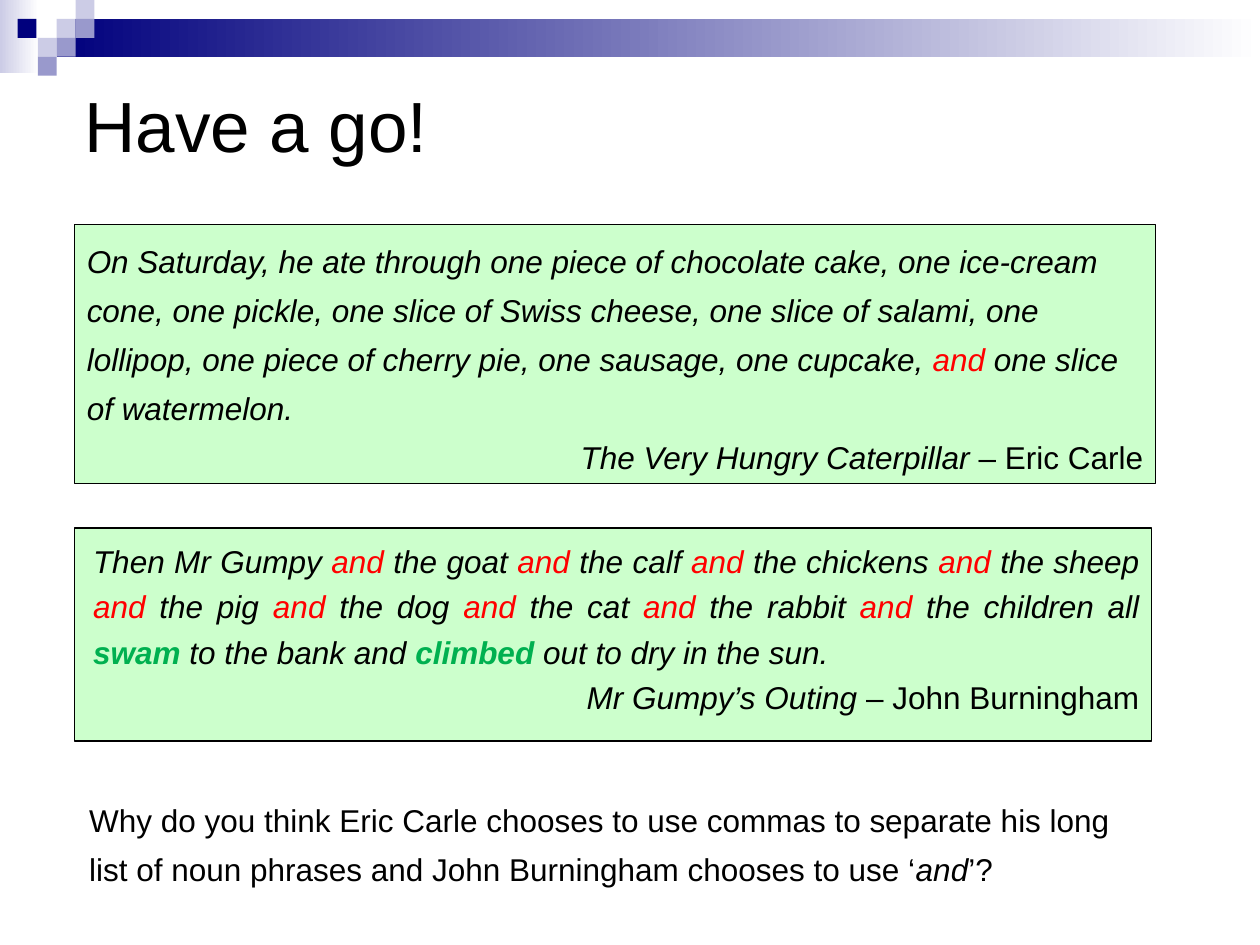
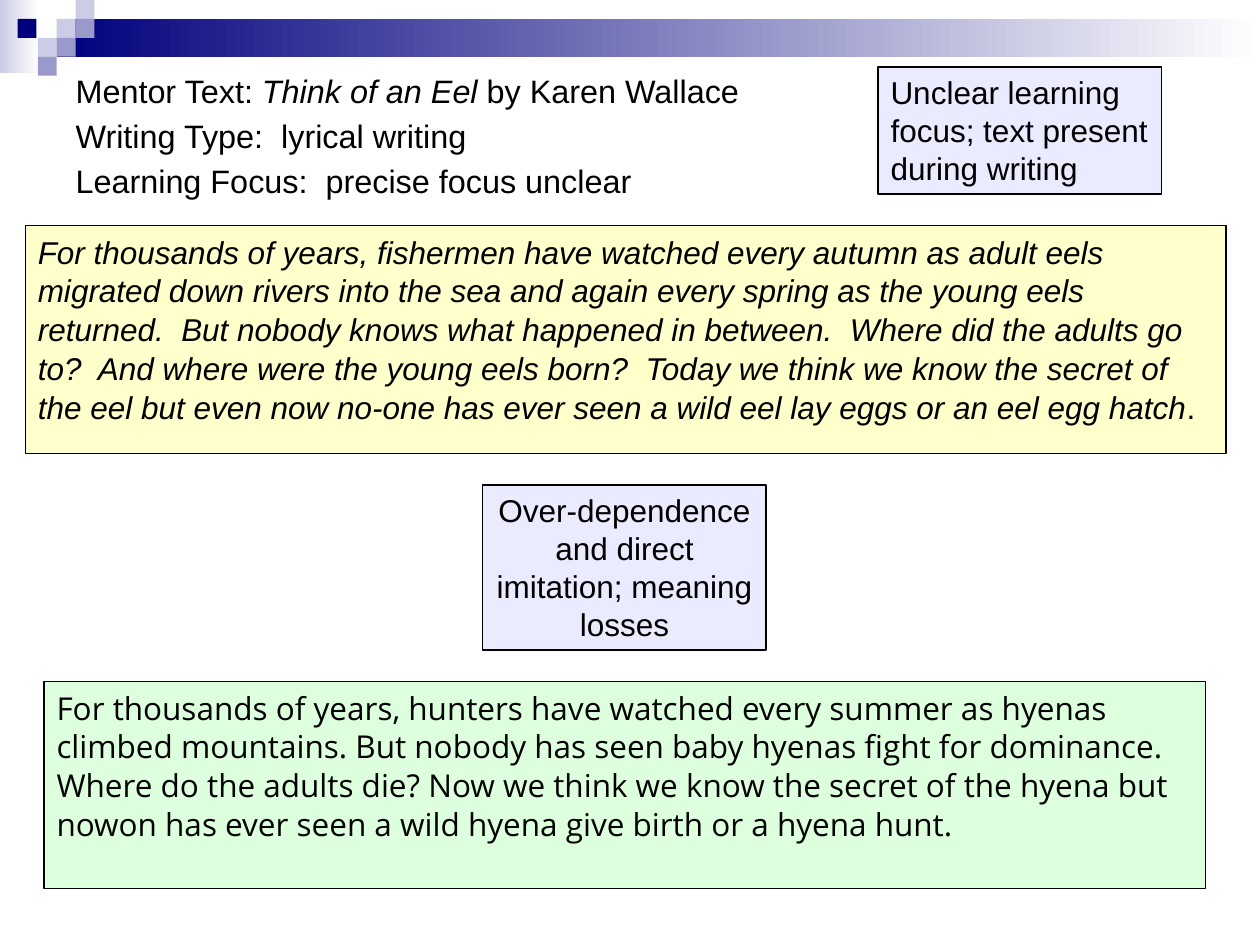
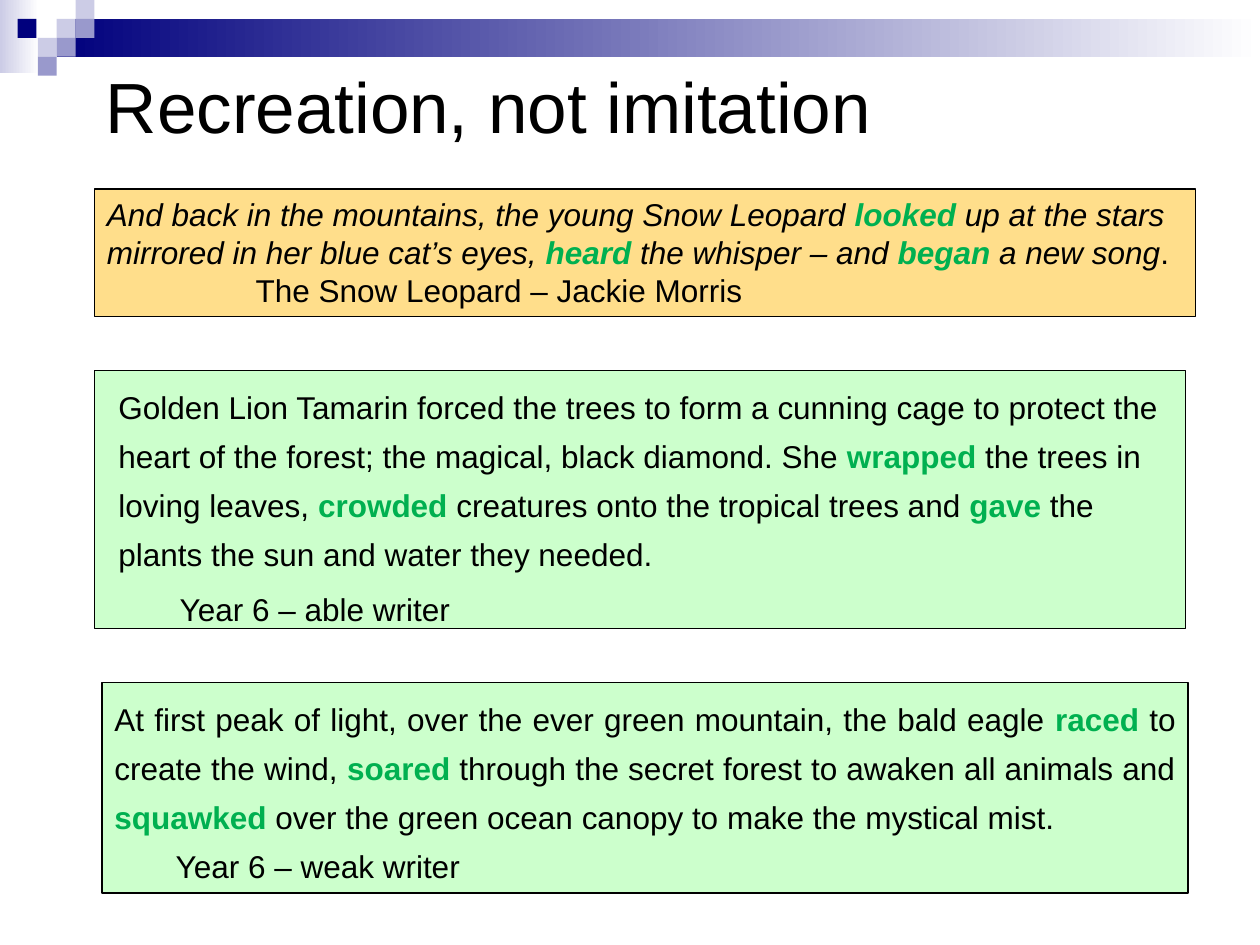
"""Build three slides on writing with mentor texts."""
from dataclasses import dataclass

from lxml import etree
from pptx import Presentation
from pptx.dml.color import RGBColor
from pptx.enum.shapes import MSO_SHAPE
from pptx.enum.text import MSO_ANCHOR, MSO_AUTO_SIZE, PP_ALIGN
from pptx.oxml.ns import qn
from pptx.util import Pt

RECTANGLE = MSO_SHAPE.RECTANGLE
TOP, MIDDLE = MSO_ANCHOR.TOP, MSO_ANCHOR.MIDDLE
LEFT, RIGHT = PP_ALIGN.LEFT, PP_ALIGN.RIGHT
CENTER, JUSTIFY = PP_ALIGN.CENTER, PP_ALIGN.JUSTIFY
NO_AUTOFIT = MSO_AUTO_SIZE.NONE

COLORS = {
    "text": "000000", "conjunction": "FF0000", "verb": "00B050",
    "navy": "00007D", "violet": "9999CC", "lilac": "CCCCE6", "white": "FFFFFF",
    "mint": "CCFFCC", "pale mint": "DDFFDD", "cream": "FFFFCC",
    "lavender": "EBEBFF", "gold": "FFDE8B",
}
FONT = "Arial"
TITLE_SIZE = 40.6
TILE = 10.8
LAYOUT_TITLE_BODY, LAYOUT_TITLE_ONLY = 1, 5
ITALIC, CONJUNCTION, VERB, BREAK = "_", "^", "*", "\n"


@dataclass(frozen=True)
class Area:
    """A rectangle in points."""
    left: float
    top: float
    width: float
    height: float

    def lengths(self) -> tuple:
        """Return the four lengths for python-pptx."""
        return Pt(self.left), Pt(self.top), Pt(self.width), Pt(self.height)


@dataclass(frozen=True)
class Line:
    """A paragraph of marked-up text and its format."""
    text: str
    align: PP_ALIGN = LEFT
    spacing: float | None = None
    indent: float = 0
    before: float = 0
    after: float = 0
    size: float = 18
    font: str = FONT


@dataclass(frozen=True)
class Panel:
    """A block of text, filled and outlined when it has a colour."""
    area: Area
    lines: tuple[Line, ...]
    fill: str | None = None
    is_body: bool = False


@dataclass(frozen=True)
class Page:
    """The title and panels of one slide."""
    title: Line
    title_area: Area
    panels: tuple[Panel, ...]
    title_anchor: MSO_ANCHOR = MIDDLE


@dataclass(frozen=True)
class Tile:
    """A small square of the corner mosaic, placed in tile units."""
    column: float
    row: int
    color: str


TILES = (
    Tile(3, 1, "lilac"), Tile(4, 0, "lilac"), Tile(4, 1, "violet"),
    Tile(2, 2, "lilac"), Tile(0.93, 1, "navy"), Tile(3, 2, "violet"),
    Tile(2, 3, "violet"),
)
FADES = (
    (Area(0, 0, 22.3, 41.8), "lilac"),
    (Area(3 * TILE, TILE, 687.6, 2 * TILE), "navy"),
)

PAGES = (
    Page(
        Line("Have a go!", size=TITLE_SIZE), Area(41, 25.9, 615.6, 90),
        (
            Panel(Area(42.5, 128.2, 617.8, 148.3), (
                Line("_On Saturday, he ate through one piece of chocolate cake, one ice-cream "
                     "cone, one pickle, one slice of Swiss cheese, one slice of salami, one "
                     "lollipop, one piece of cherry pie, one sausage, one cupcake, ^and^ one "
                     "slice of watermelon._", spacing=28),
                Line("_The Very Hungry Caterpillar_ – Eric Carle", RIGHT, 28),
            ), "mint"),
            Panel(Area(42.5, 301.7, 615.6, 121.7), (
                Line("_Then Mr Gumpy ^and^ the goat ^and^ the calf ^and^ the chickens ^and^ the "
                     "sheep ^and^ the pig ^and^ the dog ^and^ the cat ^and^ the rabbit ^and^ the "
                     "children all *swam* to the bank and *climbed* out to dry in the sun._",
                     JUSTIFY, 26, indent=3.6),
                Line("_Mr Gumpy’s Outing _– John Burningham", RIGHT, 26, indent=3.6),
            ), "mint"),
            Panel(Area(43.9, 447.8, 614.9, 64.1), (
                Line("Why do you think Eric Carle chooses to use commas to separate his long "
                     "list of noun phrases and John Burningham chooses to use ‘_and_’?",
                     spacing=28),
            )),
        ),
    ),
    Page(
        Line("Mentor Text: _Think of an Eel _by Karen Wallace\n"
             "Writing Type:  lyrical writing\n"
             "Learning Focus:  precise focus unclear", spacing=25.9, after=5.5, size=18.5),
        Area(36, 33.1, 648, 95),
        (
            Panel(Area(14.4, 128.9, 686.2, 130.3), (
                Line("_For thousands of years, fishermen have watched every autumn as adult eels "
                     "migrated down rivers into the sea and again every spring as the young eels "
                     "returned.  But nobody knows what happened in between.  Where did the "
                     "adults go to?  And where were the young eels born?  Today we think we know "
                     "the secret of the eel but even now no-one has ever seen a wild eel lay "
                     "eggs or an eel egg hatch_.", spacing=22.1),
            ), "cream", is_body=True),
            Panel(Area(25.2, 389.5, 663.8, 118.1), (
                Line("For thousands of years, hunters have watched every summer as hyenas "
                     "climbed mountains. But nobody has seen baby hyenas fight for dominance. "
                     "Where do the adults die? Now we think we know the secret of the hyena but "
                     "nowon has ever seen a wild hyena give birth or a hyena hunt.",
                     spacing=22.1, font="Open Sans"),
            ), "pale mint"),
            Panel(Area(501.8, 38.2, 162, 72.7), (
                Line("Unclear learning focus; text present during writing"),
            ), "lavender"),
            Panel(Area(275.8, 277.2, 162, 94.3), (
                Line("Over-dependence and direct imitation; meaning losses", CENTER),
            ), "lavender"),
        ),
        TOP,
    ),
    Page(
        Line("Recreation, not imitation", size=TITLE_SIZE), Area(53.3, 15.1, 621.4, 90),
        (
            Panel(Area(54, 211.7, 623.5, 147.6), (
                Line("Golden Lion Tamarin forced the trees to form a cunning cage to protect the "
                     "heart of the forest; the magical, black diamond. She *wrapped* the trees "
                     "in loving leaves, *crowded* creatures onto the tropical trees and *gave* "
                     "the plants the sun and water they needed.",
                     spacing=28, indent=6.5, before=3.6),
                Line("Year 6 – able writer", spacing=28, indent=41.5, before=3.6),
            ), "mint", is_body=True),
            Panel(Area(58.3, 390.2, 620.6, 120.2), (
                Line("At first peak of light, over the ever green mountain, the bald eagle "
                     "*raced* to create the wind, *soared* through the secret forest to awaken "
                     "all animals and *squawked* over the green ocean canopy to make the "
                     "mystical mist.", JUSTIFY, 28),
                Line("Year 6 – weak writer", JUSTIFY, 28, indent=35),
            ), "mint"),
            Panel(Area(54, 108, 629.3, 72.7), (
                Line("_And back in the mountains, the young Snow Leopard *looked* up at the "
                     "stars mirrored in her blue cat’s eyes, *heard* the whisper – and *began* a "
                     "new song_."),
                Line("The Snow Leopard – Jackie Morris", indent=85),
            ), "gold"),
        ),
    ),
)


def rgb(name: str) -> RGBColor:
    """Return the named colour."""
    return RGBColor.from_string(COLORS[name])


def add_run(paragraph, text: str, *, size: float, font: str, color: str,
            bold: bool, italic: bool) -> None:
    """Add one run of formatted text."""
    run = paragraph.add_run()
    run.text = text
    run.font.size, run.font.name = Pt(size), font
    run.font.bold, run.font.italic = bold, italic
    run.font.color.rgb = rgb(color)


def write_markup(paragraph, line: Line) -> None:
    """Write text whose marks switch italic, conjunction and verb styles."""
    active = {ITALIC: False, CONJUNCTION: False, VERB: False}
    pending = ""
    for character in line.text + BREAK:
        if character not in active and character != BREAK:
            pending += character
            continue
        if pending:
            color = ("verb" if active[VERB]
                     else "conjunction" if active[CONJUNCTION] else "text")
            add_run(paragraph, pending, size=line.size, font=line.font, color=color,
                    bold=active[VERB], italic=active[ITALIC])
            pending = ""
        if character in active:
            active[character] = not active[character]
        else:
            paragraph.add_line_break()
    paragraph._p.remove(paragraph._p.findall(qn("a:br"))[-1])


def write_lines(shape, lines: tuple[Line, ...], anchor: MSO_ANCHOR = TOP) -> None:
    """Fill a shape with formatted paragraphs without bullets."""
    frame = shape.text_frame
    frame.word_wrap, frame.auto_size, frame.vertical_anchor = True, NO_AUTOFIT, anchor
    for index, line in enumerate(lines):
        paragraph = frame.add_paragraph() if index else frame.paragraphs[0]
        paragraph.alignment = line.align
        paragraph.space_before, paragraph.space_after = Pt(line.before), Pt(line.after)
        if line.spacing:
            paragraph.line_spacing = Pt(line.spacing)
        properties = paragraph._p.get_or_add_pPr()
        properties.set("marL", str(Pt(line.indent)))
        properties.set("indent", "0")
        etree.SubElement(properties, qn("a:buNone"))
        write_markup(paragraph, line)


def place(shape, area: Area) -> None:
    """Move and size a shape."""
    shape.left, shape.top, shape.width, shape.height = area.lengths()


def add_rectangle(slide, area: Area):
    """Add a rectangle without shadow or line."""
    shape = slide.shapes.add_shape(RECTANGLE, *area.lengths())
    shape.shadow.inherit = False
    shape.line.fill.background()
    return shape


def draw_panel(slide, panel: Panel) -> None:
    """Draw a panel as body placeholder, rectangle or plain text box."""
    if panel.is_body:
        shape = slide.placeholders[1]
        place(shape, panel.area)
    elif panel.fill:
        shape = add_rectangle(slide, panel.area)
    else:
        shape = slide.shapes.add_textbox(*panel.area.lengths())
    if panel.fill:
        shape.fill.solid()
        shape.fill.fore_color.rgb = rgb(panel.fill)
        shape.line.color.rgb = rgb("text")
        shape.line.width = Pt(0.75)
    write_lines(shape, panel.lines)


def decorate_master(presentation, slide) -> None:
    """Draw the header band and mosaic and move them to the slide master."""
    decorations = []
    for area, color in FADES:
        shape = add_rectangle(slide, area)
        shape.fill.gradient()
        shape.fill.gradient_angle = 0
        for stop, name, position in zip(shape.fill.gradient_stops, (color, "white"), (0, 1)):
            stop.color.rgb = rgb(name)
            stop.position = position
        decorations.append(shape)
    for tile in TILES:
        shape = add_rectangle(slide, Area(tile.column * TILE, tile.row * TILE, TILE, TILE))
        shape.fill.solid()
        shape.fill.fore_color.rgb = rgb(tile.color)
        decorations.append(shape)
    master_tree = presentation.slide_master.shapes.element
    for index, shape in enumerate(decorations):
        shape.element.nvSpPr.cNvPr.set("id", str(100 + index))
        master_tree.insert(2 + index, shape.element)


def draw_page(presentation, page: Page):
    """Add one slide with its title and panels."""
    has_body = any(panel.is_body for panel in page.panels)
    layout = LAYOUT_TITLE_BODY if has_body else LAYOUT_TITLE_ONLY
    slide = presentation.slides.add_slide(presentation.slide_layouts[layout])
    title = slide.shapes.title
    place(title, page.title_area)
    write_lines(title, (page.title,), page.title_anchor)
    for panel in page.panels:
        draw_panel(slide, panel)
    return slide


def main() -> None:
    """Build and save the presentation."""
    presentation = Presentation()
    presentation.slide_width, presentation.slide_height = Pt(720), Pt(540)
    slides = [draw_page(presentation, page) for page in PAGES]
    decorate_master(presentation, slides[0])
    presentation.save("out.pptx")


if __name__ == "__main__":
    main()
